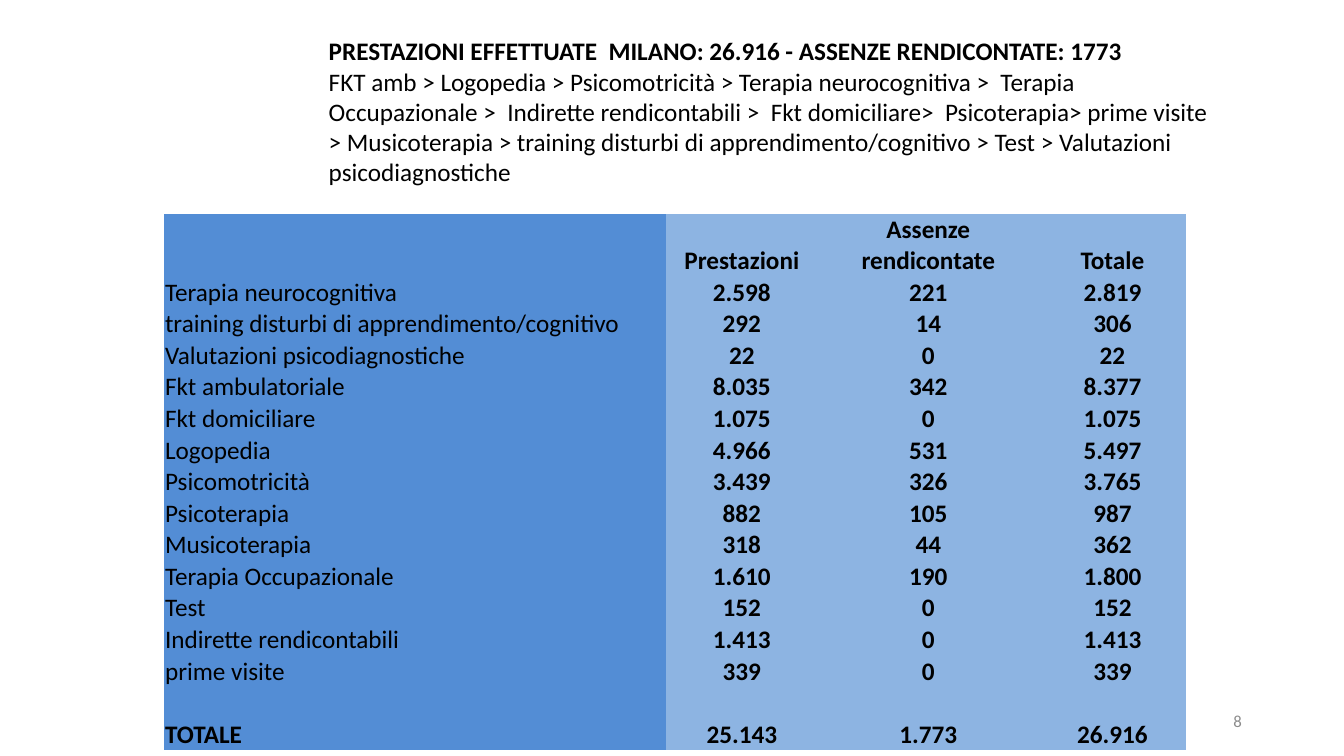
from pptx import Presentation
from pptx.dml.color import RGBColor
from pptx.enum.text import MSO_ANCHOR, MSO_AUTO_SIZE, PP_ALIGN
from pptx.util import Cm, Pt

HEAD = "PRESTAZIONI EFFETTUATE  MILANO: 26.916 - ASSENZE RENDICONTATE: 1773"
ORDER = (
    "FKT amb > Logopedia > Psicomotricità > Terapia neurocognitiva >  Terapia "
    "Occupazionale >  Indirette rendicontabili >  Fkt domiciliare>  Psicoterapia> "
    "prime visite > Musicoterapia > training disturbi di apprendimento/cognitivo > "
    "Test > Valutazioni psicodiagnostiche"
)
ROWS = [
    ("", "Prestazioni", "Assenze rendicontate", "Totale"),
    ("Terapia neurocognitiva", "2.598", "221", "2.819"),
    ("training disturbi di apprendimento/cognitivo", "292", "14", "306"),
    ("Valutazioni psicodiagnostiche", "22", "0", "22"),
    ("Fkt ambulatoriale", "8.035", "342", "8.377"),
    ("Fkt domiciliare", "1.075", "0", "1.075"),
    ("Logopedia", "4.966", "531", "5.497"),
    ("Psicomotricità", "3.439", "326", "3.765"),
    ("Psicoterapia", "882", "105", "987"),
    ("Musicoterapia", "318", "44", "362"),
    ("Terapia Occupazionale", "1.610", "190", "1.800"),
    ("Test", "152", "0", "152"),
    ("Indirette rendicontabili", "1.413", "0", "1.413"),
    ("prime visite", "339", "0", "339"),
    ("", "", "", ""),
    ("TOTALE", "25.143", "1.773", "26.916"),
]
WIDTHS = [12.65, 3.81, 5.59, 3.69]
HEAD_H, ROW_H = 1.53, 0.79
NO_STYLE = "{2D5ABB26-0587-4C30-8999-92F81FD0307C}"


def color(code):
    return RGBColor.from_string(code)


def write(para, text, size=18, bold=False, tint="000000", align=PP_ALIGN.LEFT):
    para.alignment = align
    if not text:
        return
    run = para.add_run()
    run.text = text
    font = run.font
    font.name, font.size, font.bold = "Calibri", Pt(size), bold
    font.color.rgb = color(tint)


def add_title(slide):
    title = slide.shapes.title
    title.left, title.top, title.width, title.height = Cm(8.03), Cm(0), Cm(22.83), Cm(5.3)
    frame = title.text_frame
    frame.word_wrap = True
    frame.auto_size = MSO_AUTO_SIZE.NONE
    frame.vertical_anchor = MSO_ANCHOR.TOP
    frame.margin_top = Cm(0.9)
    write(frame.paragraphs[0], HEAD, bold=True)
    write(frame.add_paragraph(), ORDER)


def add_grid(slide):
    high = HEAD_H + ROW_H * (len(ROWS) - 1)
    shape = slide.shapes.add_table(
        len(ROWS), len(WIDTHS), Cm(4.14), Cm(5.39), Cm(sum(WIDTHS)), Cm(high)
    )
    table = shape.table
    table.first_row = table.horz_banding = False
    table._tbl.tblPr[0].text = NO_STYLE
    for col, width in zip(table.columns, WIDTHS):
        col.width = Cm(width)
    for r, row in enumerate(ROWS):
        table.rows[r].height = Cm(ROW_H if r else HEAD_H)
        for c, text in enumerate(row):
            cell = table.cell(r, c)
            cell.fill.solid()
            cell.fill.fore_color.rgb = color("8DB4E2" if c else "538DD5")
            cell.vertical_anchor = MSO_ANCHOR.BOTTOM
            cell.margin_left = cell.margin_right = cell.margin_top = Cm(0.02)
            cell.margin_bottom = Cm(0)
            write(
                cell.text_frame.paragraphs[0],
                text,
                bold=c > 0 or text == "TOTALE",
                align=PP_ALIGN.CENTER if c else PP_ALIGN.LEFT,
            )


def add_number(slide):
    box = slide.shapes.add_textbox(Cm(23.93), Cm(17.65), Cm(7.62), Cm(1.02))
    frame = box.text_frame
    frame.word_wrap = True
    frame.vertical_anchor = MSO_ANCHOR.MIDDLE
    write(frame.paragraphs[0], "8", size=12, tint="8C8C8C", align=PP_ALIGN.RIGHT)


def main():
    deck = Presentation()
    deck.slide_width, deck.slide_height = Cm(33.87), Cm(19.05)
    slide = deck.slides.add_slide(deck.slide_layouts[5])
    add_title(slide)
    add_grid(slide)
    add_number(slide)
    deck.save("out.pptx")


if __name__ == "__main__":
    main()
